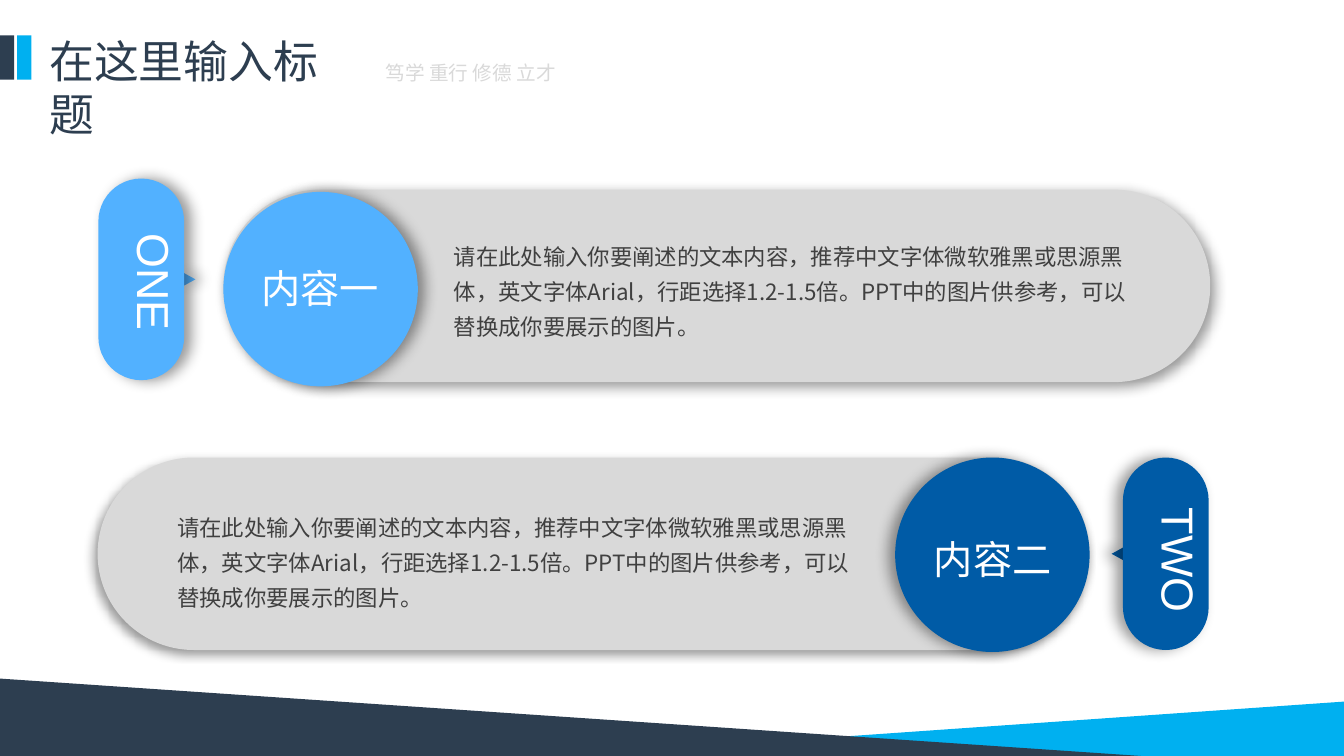
from pptx import Presentation
from pptx.dml.color import RGBColor
from pptx.enum.shapes import MSO_SHAPE
from pptx.enum.text import MSO_ANCHOR, MSO_AUTO_SIZE, PP_ALIGN
from pptx.oxml import parse_xml
from pptx.oxml.ns import nsdecls, qn
from pptx.util import Cm, Pt
from lxml.etree import SubElement

NAVY = RGBColor(0x2D, 0x3E, 0x50)
CYAN = RGBColor(0x00, 0xB0, 0xF0)
SKY = RGBColor(0x52, 0xB1, 0xFF)
BLUE = RGBColor(0x00, 0x5B, 0xA6)
PALE = RGBColor(0xD9, 0xD9, 0xD9)
GREY = RGBColor(0x40, 0x40, 0x40)
WHITE = RGBColor(0xFF, 0xFF, 0xFF)
HAN = "Noto Sans CJK SC"
WIDTH, HEIGHT = 33.87, 19.05
BODY = ("请在此处输入你要阐述的文本内容，推荐中文字体微软雅黑或思源黑体，"
        "英文字体Arial，行距选择1.2-1.5倍。PPT中的图片供参考，可以替换成你要展示的图片。")


def paint(shape, color):
    """Give a shape a plain fill without line or shadow."""
    shape.fill.solid()
    shape.fill.fore_color.rgb = color
    shape.line.fill.background()
    shape.shadow.inherit = False


def shade(shape, blur, dist, angle):
    """Add a soft black outer shadow; angle is in degrees."""
    effect = shape._element.spPr.find(qn("a:effectLst"))
    effect.append(parse_xml(
        f'<a:outerShdw {nsdecls("a")} blurRad="{Pt(blur)}" dist="{Pt(dist)}" '
        f'dir="{angle * 60000}" algn="ctr" rotWithShape="0">'
        '<a:srgbClr val="000000"><a:alpha val="40000"/></a:srgbClr></a:outerShdw>'))


def block(slide, kind, box, color):
    """Draw a filled preset shape in a box given in centimetres."""
    shape = slide.shapes.add_shape(kind, *map(Cm, box))
    paint(shape, color)
    return shape


def pill(slide, box, color):
    """Draw a rectangle with fully rounded ends."""
    shape = block(slide, MSO_SHAPE.ROUNDED_RECTANGLE, box, color)
    shape.adjustments[0] = 0.5
    return shape


def write(frame, text, size, color, font=HAN, align=PP_ALIGN.LEFT):
    """Put one formatted paragraph into a text frame."""
    frame.text = text
    frame.word_wrap = True
    frame.auto_size = MSO_AUTO_SIZE.NONE
    frame.vertical_anchor = MSO_ANCHOR.TOP
    para = frame.paragraphs[0]
    para.alignment = align
    for run in para.runs:
        run.font.size = Pt(size)
        run.font.name = font
        run.font.color.rgb = color
        SubElement(run.font._element, qn("a:ea")).set("typeface", font)
    return para


def label(slide, box, *style, **more):
    """Add a text box in a box given in centimetres."""
    frame = slide.shapes.add_textbox(*map(Cm, box)).text_frame
    return frame, write(frame, *style, **more)


def wedge(slide, points, color):
    """Draw a filled triangle through points in centimetres."""
    start, *rest = [(Cm(x), Cm(y)) for x, y in points]
    path = slide.shapes.build_freeform(*start)
    path.add_line_segments(rest, close=True)
    paint(path.convert_to_shape(), color)


def footer(slide, width, base):
    """Draw the two slanted wedges along the lower edge."""
    wedge(slide, [(14.25, base), (width, 17.68), (width, base)], CYAN)
    wedge(slide, [(0, 17.1), (28.75, base), (0, base)], NAVY)


def header(slide, top):
    """Draw the colour bars, the title and the motto."""
    for left, color in ((0.43, CYAN), (0, NAVY)):
        block(slide, MSO_SHAPE.RECTANGLE, (left, top, 0.36, 1.12), color)
    title = slide.shapes.title
    title.left, title.top = Cm(0.99), Cm(top - 0.18)
    title.width, title.height = Cm(8.2), Cm(1.63)
    write(title.text_frame, "在这里输入标题", 32, NAVY)
    label(slide, (9.47, top + 0.51, 6.71, 0.86), "笃学 重行 修德 立才",
          14, PALE, align=PP_ALIGN.JUSTIFY)


def topic(slide, box, color, tag, name, gap, rise, drop, flip):
    """Draw a tab, a disc and a text plate, mirrored when flip is set."""
    left, top, width, height = box

    def place(inset, span):
        """Return the left edge of a part measured from the tab side."""
        return left + (width - inset - span if flip else inset)

    angle = 180 if flip else 0
    tall = height + rise * 0.82
    tab_top = top - rise
    mid = tab_top + tall / 2
    arrow = block(slide, MSO_SHAPE.ISOSCELES_TRIANGLE,
                  (place(2.13, 0.33), mid - 0.15, 0.33, 0.3), color)
    arrow.rotation = 270 if flip else 90
    tab = pill(slide, (place(0, 2.16), tab_top, 2.16, tall), color)
    frame, _ = label(slide, (place(0, 2.16) + 0.35, mid - 1.41, 1.88, 2.82),
                     tag, 32, WHITE, font="Arial", align=PP_ALIGN.CENTER)
    frame.word_wrap = False
    frame._txBody.bodyPr.set("vert", "eaVert")

    span = width - gap
    plate = pill(slide, (place(gap, span), top, span, height), PALE)
    shade(plate, 7 if flip else 9, 4, 135 if flip else 45)
    disc = block(slide, MSO_SHAPE.OVAL,
                 (place(gap, 4.9), top + rise * 0.2, 4.9, 4.9), color)
    for part in (arrow, tab, disc):
        shade(part, 10, 5, angle)
    _, para = label(slide, (place(8.71, 17.53), top + drop, 17.53, 2.92),
                    BODY, 16, GREY)
    para.line_spacing = 1.3
    label(slide, (place(gap + 0.64, 3.61), top + drop + 0.74, 3.61, 1.45),
          name, 28, WHITE, align=PP_ALIGN.CENTER)


def main():
    """Build the slide and save it."""
    deck = Presentation()
    deck.slide_width, deck.slide_height = Cm(WIDTH), Cm(HEIGHT)
    slide = deck.slides.add_slide(deck.slide_layouts[5])
    footer(slide, WIDTH, HEIGHT)
    header(slide, 0.89)
    topic(slide, (2.48, 4.78, 28.02, 4.85), SKY, "ONE", "内容一",
          3.15, 0.28, 1.02, False)
    topic(slide, (2.46, 11.53, 28, 4.85), BLUE, "TWO", "内容二",
          3, 0, 1.09, True)
    deck.save("out.pptx")


if __name__ == "__main__":
    main()
